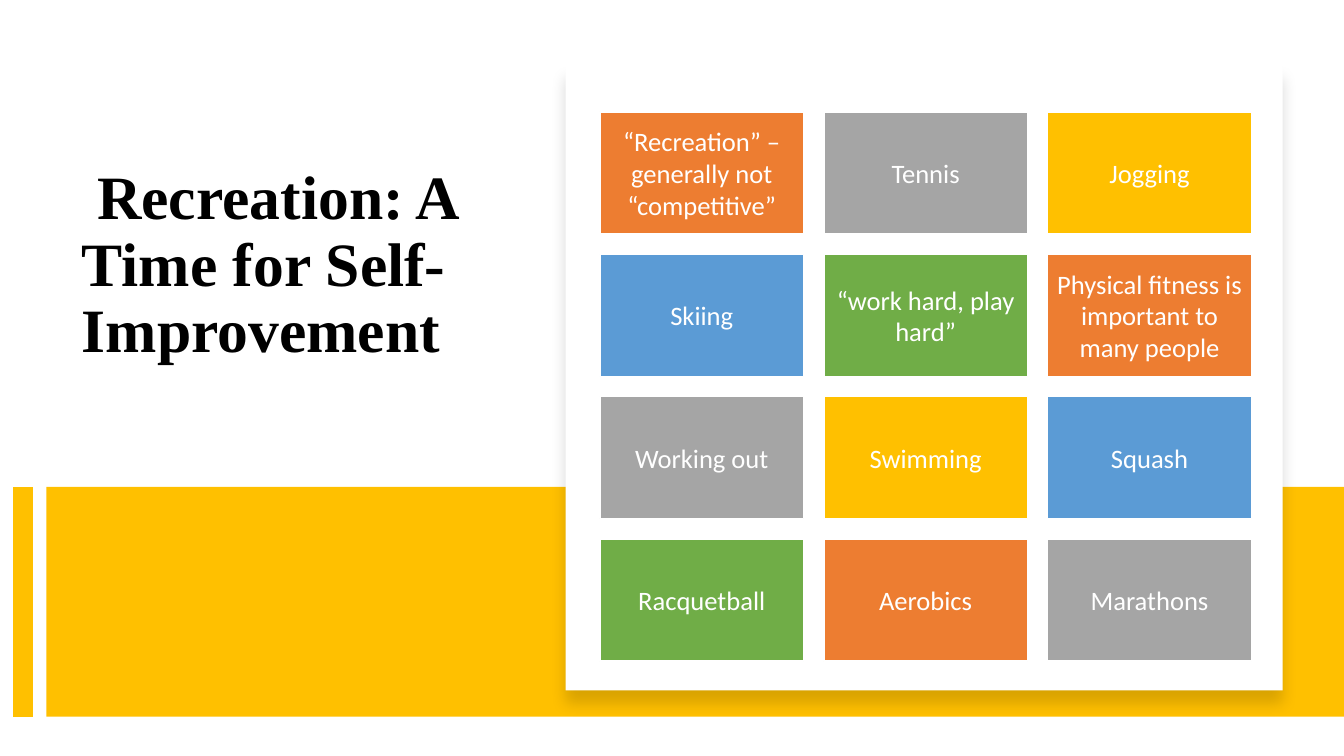
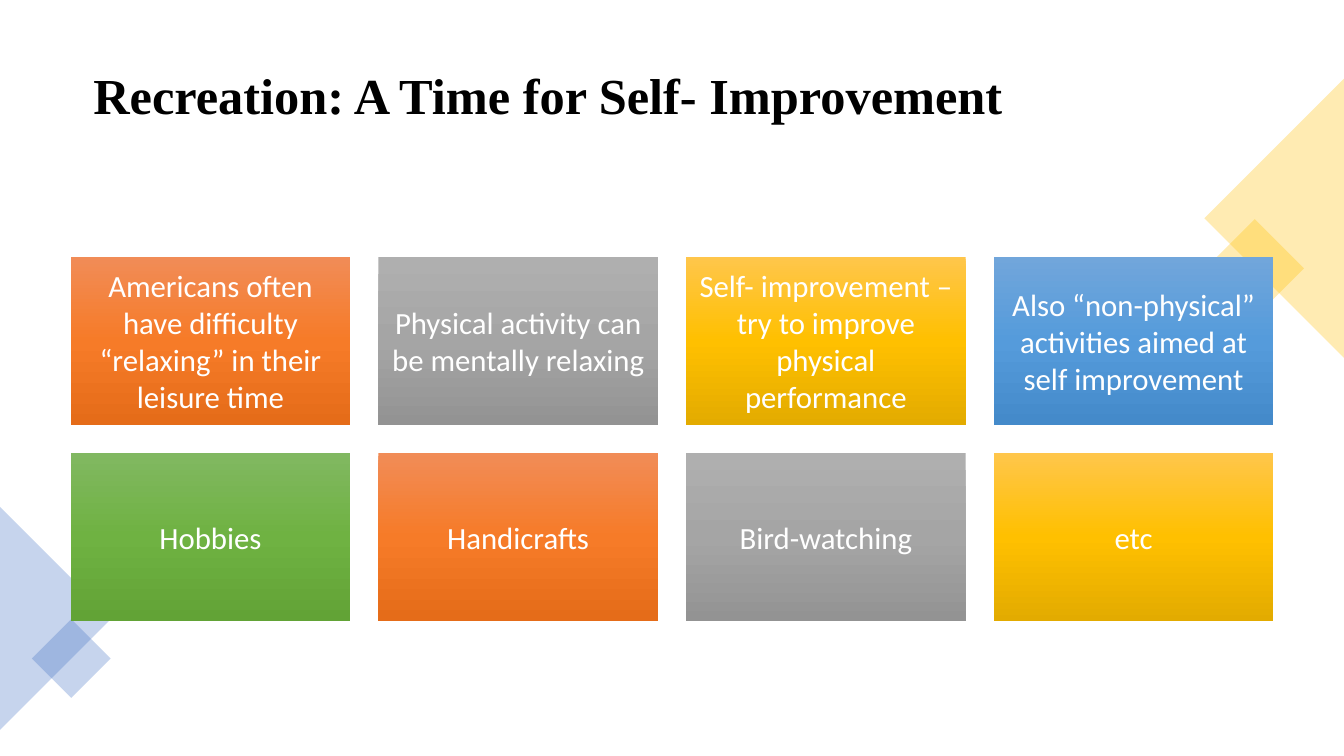
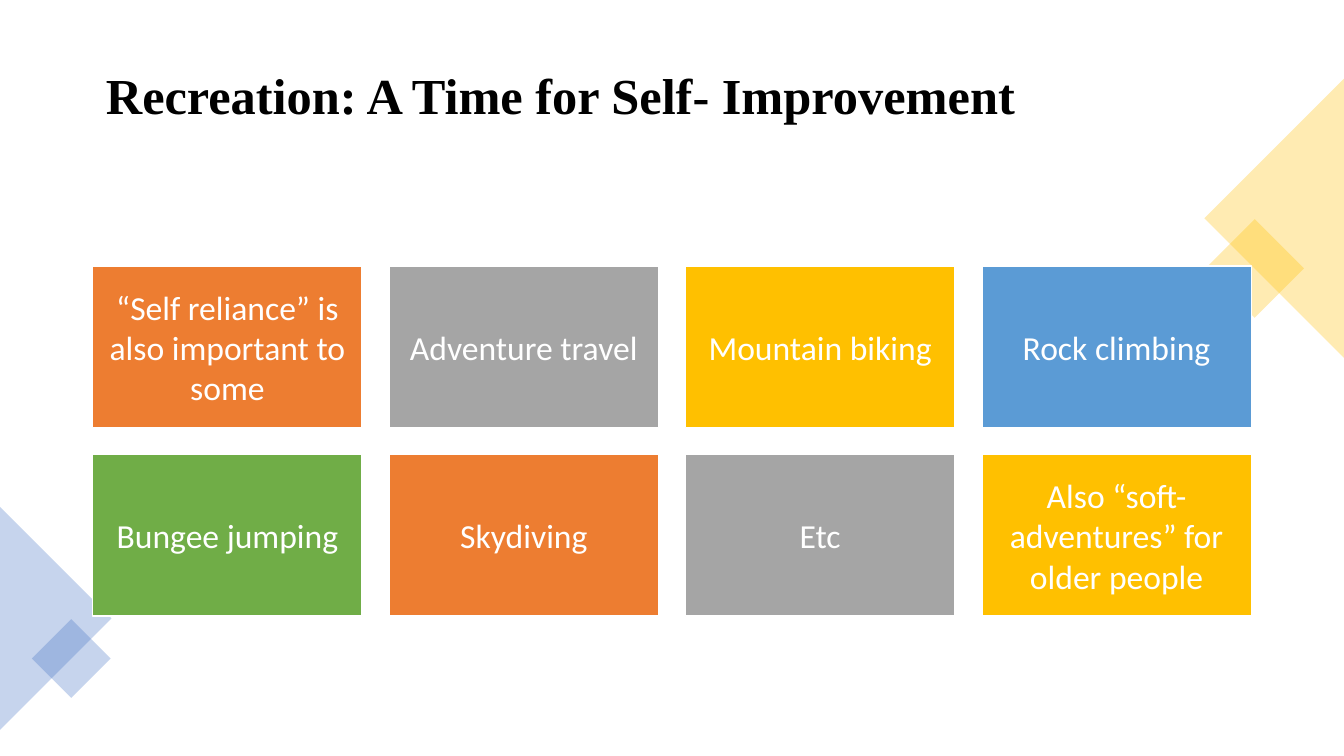
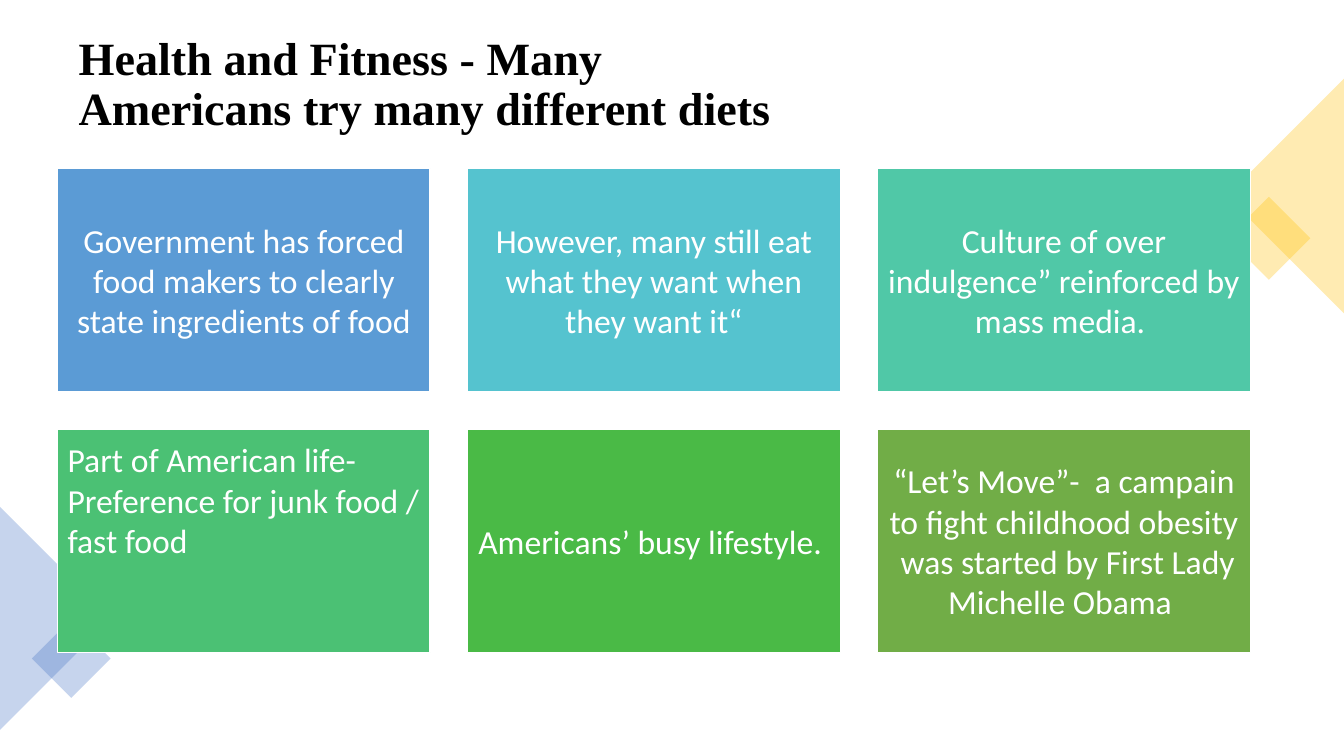
from copy import deepcopy
from itertools import cycle
from lxml import etree
from pptx import Presentation
from pptx.dml.color import RGBColor
from pptx.enum.shapes import MSO_CONNECTOR, MSO_SHAPE
from pptx.enum.text import MSO_ANCHOR, MSO_AUTO_SIZE, PP_ALIGN
from pptx.oxml.ns import qn
from pptx.util import Inches, Pt

RECT, TRI = MSO_SHAPE.RECTANGLE, MSO_SHAPE.ISOSCELES_TRIANGLE
LINE = MSO_CONNECTOR.STRAIGHT
TOP, MID = MSO_ANCHOR.TOP, MSO_ANCHOR.MIDDLE
LEFT, MIDST = PP_ALIGN.LEFT, PP_ALIGN.CENTER
FIXED = MSO_AUTO_SIZE.NONE

WIDE, HIGH = Inches(13.33), Inches(7.5)
SERIF, SANS = "Times New Roman", "Calibri"

BLACK = RGBColor(0x00, 0x00, 0x00)
WHITE = RGBColor(0xFF, 0xFF, 0xFF)
ORANGE = RGBColor(0xED, 0x7D, 0x31)
GREY = RGBColor(0xA5, 0xA5, 0xA5)
GOLD = RGBColor(0xFF, 0xC0, 0x00)
SKY = RGBColor(0x5B, 0x9B, 0xD5)
GREEN = RGBColor(0x70, 0xAD, 0x47)
NAVY = RGBColor(0x44, 0x72, 0xC4)
AQUA = RGBColor(0x55, 0xC3, 0xCF)
TEAL = RGBColor(0x50, 0xC8, 0xA7)
MINT = RGBColor(0x4B, 0xC1, 0x74)
LEAF = RGBColor(0x4A, 0xBA, 0x46)
MOSS = RGBColor(0x71, 0xAD, 0x47)

FLAT = [ORANGE, GREY, GOLD, SKY, GREEN]
COOL = [SKY, AQUA, TEAL, MINT, LEAF, MOSS]
SHADES = [
    [RGBColor(0xF1, 0x8C, 0x57), RGBColor(0xF6, 0x7B, 0x28), RGBColor(0xE5, 0x6C, 0x19)],
    [RGBColor(0xAF, 0xAF, 0xAF), GREY, RGBColor(0x93, 0x93, 0x93)],
    [RGBColor(0xFF, 0xC6, 0x4B), GOLD, RGBColor(0xE3, 0xAB, 0x00)],
    [RGBColor(0x71, 0xA6, 0xDB), RGBColor(0x55, 0x9B, 0xDB), RGBColor(0x44, 0x8A, 0xCA)],
    [RGBColor(0x81, 0xB8, 0x61), RGBColor(0x6F, 0xB2, 0x42), RGBColor(0x62, 0xA3, 0x36)],
]

HEAD = "Recreation: A Time for Self- Improvement"
HEADBOX = (5.25, 4.67, 89.5, 16.53)
SPORTS = [
    "“Recreation” – generally not “competitive”", "Tennis", "Jogging",
    "Skiing", "“work hard, play hard”",
    "Physical fitness is important to many people",
    "Working out", "Swimming", "Squash",
    "Racquetball", "Aerobics", "Marathons",
]
HOBBIES = [
    "Americans often have difficulty “relaxing” in their leisure time",
    "Physical activity can be mentally relaxing",
    "Self- improvement – try to improve physical performance",
    "Also “non-physical” activities aimed at self improvement",
    "Hobbies", "Handicrafts", "Bird-watching", "etc",
]
THRILLS = [
    "“Self reliance” is also important to some", "Adventure travel",
    "Mountain biking", "Rock climbing", "Bungee jumping", "Skydiving",
    "Etc", "Also “soft-adventures” for older people",
]
DIETS = [
    "Government has forced food makers to clearly state ingredients of food",
    "However, many still eat what they want when they want it“",
    "Culture of over indulgence” reinforced by mass media. ",
    "Part of American life-Preference for junk food / fast food",
    "Americans’ busy lifestyle. ",
    "“Let’s Move”-  a campain to fight childhood obesity  was started by "
    "First Lady Michelle Obama ",
]


def share(x, y, w, h):
    return [int(WIDE * x / 100), int(HIGH * y / 100),
            int(WIDE * w / 100), int(HIGH * h / 100)]


def block(slide, kind, box, fill):
    shape = slide.shapes.add_shape(kind, *[int(n) for n in box])
    shape.shadow.inherit = False
    shape.line.fill.background()
    shape.fill.solid()
    shape.fill.fore_color.rgb = fill
    return shape


def write(para, text, font, size, color, bold=False):
    run = para.add_run()
    run.text = text
    run.font.name, run.font.size = font, Pt(size)
    run.font.color.rgb, run.font.bold = color, bold


def start(deck, text, box, size, anchor=MID, inset=0, first=0):
    slide = deck.slides.add_slide(deck.slide_layouts[5])
    title = slide.shapes.title
    title.left, title.top, title.width, title.height = share(*box)
    frame = title.text_frame
    frame.auto_size, frame.word_wrap = FIXED, True
    frame.vertical_anchor = anchor
    frame.margin_left = Inches(0.1) + Pt(inset)
    para = frame.paragraphs[0]
    para.alignment, para.line_spacing = LEFT, 0.9
    write(para, text, SERIF, size, BLACK, True)
    if first:
        para._p.get_or_add_pPr().set("indent", str(Pt(first)))
    return slide


def blend(shape, tones):
    fill = shape.fill
    fill.gradient()
    fill.gradient_angle = 270
    stop = shape.element.xpath(".//a:gs")[0]
    stop.addnext(deepcopy(stop))
    for i, (stop, tone) in enumerate(zip(fill.gradient_stops, tones)):
        stop.position = i / 2
        stop.color.rgb = tone


def card(slide, box, text, size, tone):
    shaded = isinstance(tone, list)
    shape = block(slide, RECT, box, WHITE if shaded else tone)
    if shaded:
        blend(shape, tone)
    else:
        shape.line.color.rgb = WHITE
        shape.line.width = Pt(1)
    frame = shape.text_frame
    frame.word_wrap, frame.vertical_anchor = True, MID
    frame.margin_left = frame.margin_right = Pt(size * 0.3)
    frame.margin_top = frame.margin_bottom = Pt(size * 0.3)
    para = frame.paragraphs[0]
    para.alignment = MIDST
    write(para, text, SANS, size, WHITE)
    return shape


def grid(slide, x, y, w, cols, texts, size, tones):
    left, top, span, _ = share(x, y, w, 0)
    wide = span / (cols + 0.1 * (cols - 1))
    cards = []
    for i, (text, tone) in enumerate(zip(texts, cycle(tones))):
        row, col = divmod(i, cols)
        box = (left + col * 1.1 * wide, top + row * 0.7 * wide, wide, 0.6 * wide)
        cards.append(card(slide, box, text, size, tone))
    return cards


def fade(shape):
    color = shape.element.spPr.find(qn("a:solidFill"))[0]
    etree.SubElement(color, qn("a:alpha"), val="30000")


def corner(slide, right, y, tall, color):
    size, mid = HIGH * tall / 100, HIGH * y / 100
    side = -1 if right else 1
    hub = WIDE - size / 4 if right else size / 4
    gem = size / 4
    x, y = hub + side * 0.07 * size, mid + 0.18 * size
    tilt = block(slide, RECT, (x - gem / 2, y - gem / 2, gem, gem), color)
    tilt.rotation = 45
    wedge = block(slide, TRI, (hub - size / 2, mid - size / 4, size, size / 2), color)
    wedge.rotation = 270 if right else 90
    fade(tilt)
    fade(wedge)


def corners(slide, y, tall):
    corner(slide, True, y, tall, GOLD)
    corner(slide, False, 81.8, 29.47, NAVY)


def band(slide, x, y, w, h):
    block(slide, RECT, share(x, y, w, h), GOLD)
    left, top, _, tall = share(x / 2, y, w, h)
    bar = slide.shapes.add_connector(LINE, left, top, left, top + tall)
    bar.line.color.rgb, bar.line.width = GOLD, Pt(14)
    etree.SubElement(bar._element.spPr, qn("a:effectLst"))


def panel(slide, box):
    shape = block(slide, RECT, share(*box), WHITE)
    glow = etree.SubElement(
        shape.element.spPr.find(qn("a:effectLst")), qn("a:outerShdw"),
        blurRad=str(Pt(11)), dist=str(Pt(10)), dir="5400000", rotWithShape="0")
    color = etree.SubElement(glow, qn("a:srgbClr"), val=str(BLACK))
    etree.SubElement(color, qn("a:alpha"), val="15000")


def main():
    deck = Presentation()
    deck.slide_width, deck.slide_height = WIDE, HIGH

    slide = start(deck, HEAD, (5.33, 21.33, 31.13, 39.2), 44, TOP, first=11)
    band(slide, 3.45, 64.4, 96.55, 30.4)
    panel(slide, (42.09, 8.53, 53.34, 82.8))
    grid(slide, 44.64, 14.8, 48.46, 3, SPORTS, 19, FLAT)

    slide = start(deck, HEAD, HEADBOX, 36, inset=9)
    corners(slide, 28.87, 36.93)
    grid(slide, 5.25, 34, 89.5, 4, HOBBIES, 22, SHADES)

    slide = start(deck, HEAD, HEADBOX, 36, inset=18)
    corners(slide, 28.87, 36.93)
    grid(slide, 6.9, 35.2, 86.2, 4, THRILLS, 24, FLAT)

    slide = start(deck, "Health and Fitness - Many Americans try many different diets",
                  (5.1, 3.07, 56.56, 16.53), 33)
    corners(slide, 25.93, 31.07)
    cards = grid(slide, 4.28, 22.27, 88.75, 3, DIETS, 24, COOL)
    junk = cards[3].text_frame
    junk.vertical_anchor, junk.paragraphs[0].alignment = TOP, LEFT

    deck.save("out.pptx")


if __name__ == "__main__":
    main()
